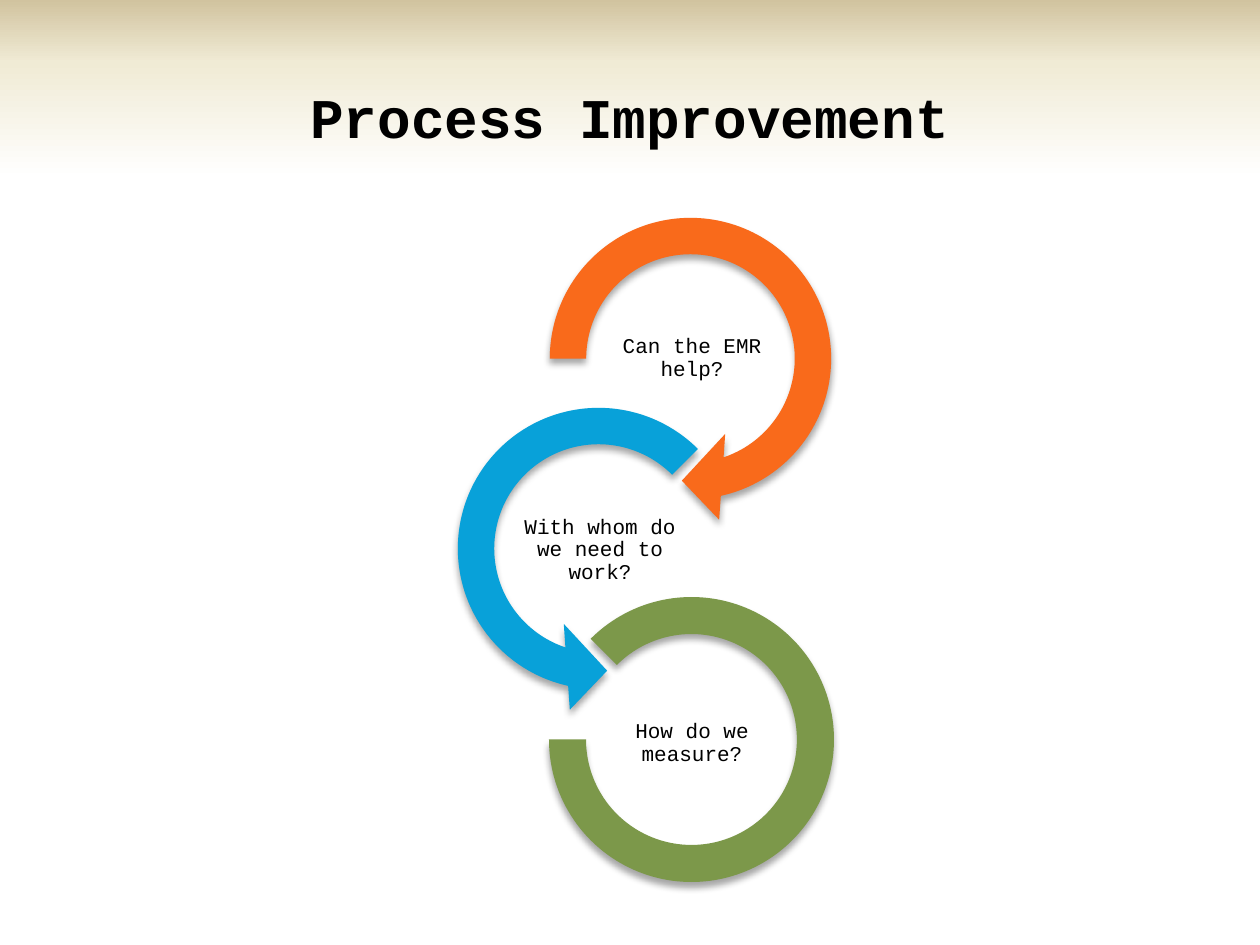
from dataclasses import dataclass

from pptx import Presentation
from pptx.dml.color import RGBColor
from pptx.enum.shapes import MSO_SHAPE
from pptx.enum.text import MSO_ANCHOR, PP_ALIGN
from pptx.oxml import parse_xml
from pptx.oxml.ns import nsdecls
from pptx.util import Emu, Pt


@dataclass(frozen=True)
class Theme:
    font: str = "Courier New"
    text: str = "000000"
    shadow: str = "000000"
    orange: str = "F96A1B"
    blue: str = "08A1D9"
    green: str = "7C984A"
    band: tuple = ((0, "D1C39F"), (35, "F0EBD5"), (100, "FFFFFF"))
    title_size: int = 32
    label_size: int = 12


THEME = Theme()
LABEL_SIZE = (184, 92)

# Ring shape, its box, adjustments, colour, label position and wording
STEPS = (
    (MSO_SHAPE.CIRCULAR_ARROW, (525, 193, 331, 331),
     (0.11, 11.42, 45, 108, 0.13), THEME.orange,
     (600, 312), "Can the EMR help?"),
    (MSO_SHAPE.LEFT_CIRCULAR_ARROW, (433, 383, 331, 331),
     (0.11, 11.42, 63, 189, 0.13), THEME.blue,
     (508, 504), "With whom do we need to work?"),
    (MSO_SHAPE.BLOCK_ARC, (549, 597, 285, 285),
     (135, 108, 0.13), THEME.green,
     (600, 697), "How do we measure?"),
)


def px(n):
    return Emu(round(n * 914400 / 126))


def place(sp, box):
    sp.left, sp.top, sp.width, sp.height = map(px, box)


def write(tf, text, size, bold=False, line_spacing=None, inset=None):
    """Put one centred paragraph in the middle of a text frame."""
    tf.word_wrap = True
    tf.vertical_anchor = MSO_ANCHOR.MIDDLE
    if inset is not None:
        tf.margin_left = tf.margin_right = px(inset)
        tf.margin_top = tf.margin_bottom = px(inset)
    p = tf.paragraphs[0]
    p.alignment = PP_ALIGN.CENTER
    if line_spacing:
        p.line_spacing = line_spacing
    r = p.add_run()
    r.text = text
    r.font.name = THEME.font
    r.font.size = Pt(size)
    r.font.bold = bold
    r.font.color.rgb = RGBColor.from_string(THEME.text)


def add_band(s):
    """Add the strip that fades from tan to white down the slide's top."""
    sp = s.shapes.add_shape(MSO_SHAPE.RECTANGLE, 0, 0, px(1260), px(179))
    sp.shadow.inherit = False
    sp.line.fill.background()
    stops = "".join(
        f'<a:gs pos="{pos * 1000}"><a:srgbClr val="{color}"/></a:gs>'
        for pos, color in THEME.band)
    sp.line._ln.addprevious(parse_xml(
        f'<a:gradFill {nsdecls("a")} rotWithShape="1"><a:gsLst>{stops}</a:gsLst>'
        '<a:lin ang="5400000" scaled="0"/></a:gradFill>'))


def add_title(s, text):
    title = s.shapes.title
    place(title, (0, 38, 1260, 157))
    write(title.text_frame, text, THEME.title_size, bold=True)


def add_shadow(sp):
    sp.shadow.inherit = False
    effects = sp._element.spPr.find("{*}effectLst")
    effects.append(parse_xml(
        f'<a:outerShdw {nsdecls("a")} blurRad="{Pt(4)}" dist="{Pt(3)}" '
        f'dir="5400000" rotWithShape="0"><a:srgbClr val="{THEME.shadow}">'
        '<a:alpha val="35000"/></a:srgbClr></a:outerShdw>'))


def add_ring(s, kind, box, adjustments, color):
    sp = s.shapes.add_shape(kind, *map(px, box))
    for i, value in enumerate(adjustments):
        sp.adjustments[i] = value
    sp.fill.solid()
    sp.fill.fore_color.rgb = RGBColor.from_string(color)
    sp.line.fill.background()
    add_shadow(sp)


def add_label(s, position, text):
    sp = s.shapes.add_textbox(*map(px, position + LABEL_SIZE))
    write(sp.text_frame, text, THEME.label_size, line_spacing=0.9, inset=1)


def main():
    prs = Presentation()
    prs.slide_width, prs.slide_height = px(1260), px(945)
    s = prs.slides.add_slide(prs.slide_layouts[5])
    add_band(s)
    # The title sits in front of the band
    s.shapes._spTree.append(s.shapes.title._element)
    add_title(s, "Process Improvement")
    for kind, box, adjustments, color, position, text in STEPS:
        add_ring(s, kind, box, adjustments, color)
        add_label(s, position, text)
    prs.save("out.pptx")


if __name__ == "__main__":
    main()
